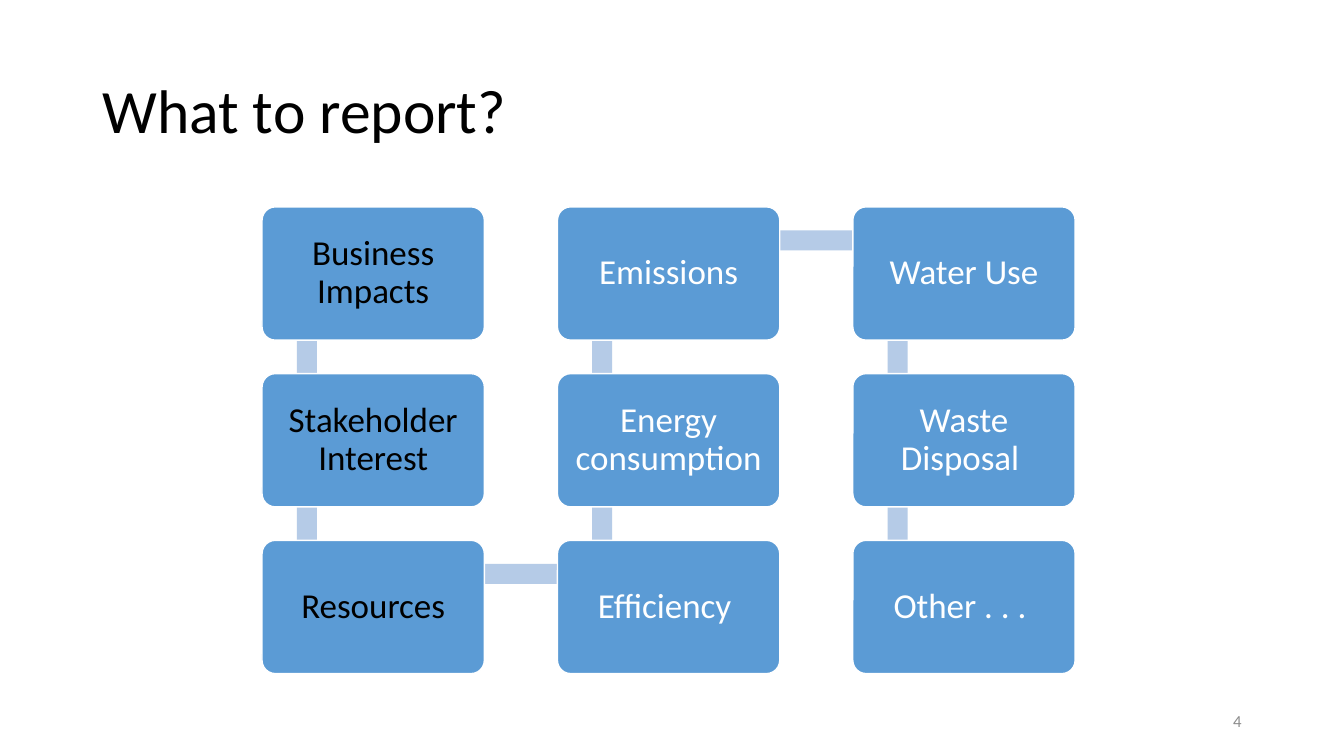
from pptx import Presentation
from pptx.dml.color import RGBColor
from pptx.enum.shapes import MSO_SHAPE as Shape
from pptx.enum.text import MSO_ANCHOR as Anchor, PP_ALIGN as Align
from pptx.util import Pt

COLORS = {"black": "000000", "white": "FFFFFF", "gray": "8C8C8C",
          "box": "5B9BD5", "bar": "B5CBE7"}

# Topics in reading order of the snake: label, column, row, text colour
TOPICS = [
    ("Business Impacts", 0, 0, "black"),
    ("Stakeholder Interest", 0, 1, "black"),
    ("Resources", 0, 2, "black"),
    ("Efficiency ", 1, 2, "white"),
    ("Energy consumption", 1, 1, "white"),
    ("Emissions", 1, 0, "white"),
    ("Water Use", 2, 0, "white"),
    ("Waste Disposal ", 2, 1, "white"),
    ("Other . . . ", 2, 2, "white"),
]

# Grid, in points
GRID_LEFT, GRID_TOP = 187.2, 147.8
COLUMN_STEP, ROW_STEP = 211, 119.1
BOX_WIDTH, BOX_HEIGHT = 158.8, 95.2
BAR_OFFSET_X, BAR_OFFSET_Y, BAR_THICKNESS = 32, 24, 14.3


def color(name):
    return RGBColor.from_string(COLORS[name])


def box_corner(column, row):
    return GRID_LEFT + column * COLUMN_STEP, GRID_TOP + row * ROW_STEP


def write(shape, text, size, color_name, align, inset=None, spacing=None):
    frame = shape.text_frame
    frame.word_wrap = True
    frame.vertical_anchor = Anchor.MIDDLE
    if inset is not None:
        frame.margin_left = frame.margin_right = Pt(inset)
        frame.margin_top = frame.margin_bottom = Pt(inset)
    frame.text = text
    paragraph = frame.paragraphs[0]
    paragraph.alignment = align
    paragraph.line_spacing = spacing
    font = paragraph.runs[0].font
    font.name = "Calibri"
    font.size = Pt(size)
    font.color.rgb = color(color_name)


def add_block(slide, preset, left, top, width, height, fill):
    shape = slide.shapes.add_shape(preset, Pt(left), Pt(top), Pt(width), Pt(height))
    shape.shadow.inherit = False
    shape.fill.solid()
    shape.fill.fore_color.rgb = color(fill)
    shape.line.fill.background()
    return shape


def add_bar(slide, start, end):
    """Joins two neighbouring boxes with a bar that runs behind them."""
    (x1, y1), (x2, y2) = box_corner(*start), box_corner(*end)
    left, top = min(x1, x2) + BAR_OFFSET_X, min(y1, y2) + BAR_OFFSET_Y
    if x1 == x2:
        add_block(slide, Shape.RECTANGLE, left - BAR_THICKNESS / 2, top,
                  BAR_THICKNESS, ROW_STEP, "bar")
    else:
        add_block(slide, Shape.RECTANGLE, left, top - BAR_THICKNESS / 2,
                  COLUMN_STEP, BAR_THICKNESS, "bar")


def add_topic(slide, label, column, row, text_color):
    left, top = box_corner(column, row)
    box = add_block(slide, Shape.ROUNDED_RECTANGLE, left, top,
                    BOX_WIDTH, BOX_HEIGHT, "box")
    box.adjustments[0] = 0.1
    box.line.color.rgb = color("white")
    box.line.width = Pt(1)
    write(box, label, 25, text_color, Align.CENTER, inset=9.5, spacing=0.9)


def main():
    presentation = Presentation()
    presentation.slide_width, presentation.slide_height = Pt(960), Pt(540)
    slide = presentation.slides.add_slide(presentation.slide_layouts[5])

    # Title
    title = slide.shapes.title
    title.left, title.top = Pt(66), Pt(28.8)
    title.width, title.height = Pt(828), Pt(104.4)
    write(title, "What to report?", 44, "black", Align.LEFT, spacing=0.9)

    # Bars between consecutive topics, then the boxes over them
    for (_, *start, _), (_, *end, _) in zip(TOPICS, TOPICS[1:]):
        add_bar(slide, start, end)
    for topic in TOPICS:
        add_topic(slide, *topic)

    # Slide number
    number = slide.shapes.add_textbox(Pt(678), Pt(500.5), Pt(216), Pt(28.8))
    write(number, "4", 12, "gray", Align.RIGHT)

    presentation.save("out.pptx")


if __name__ == "__main__":
    main()
